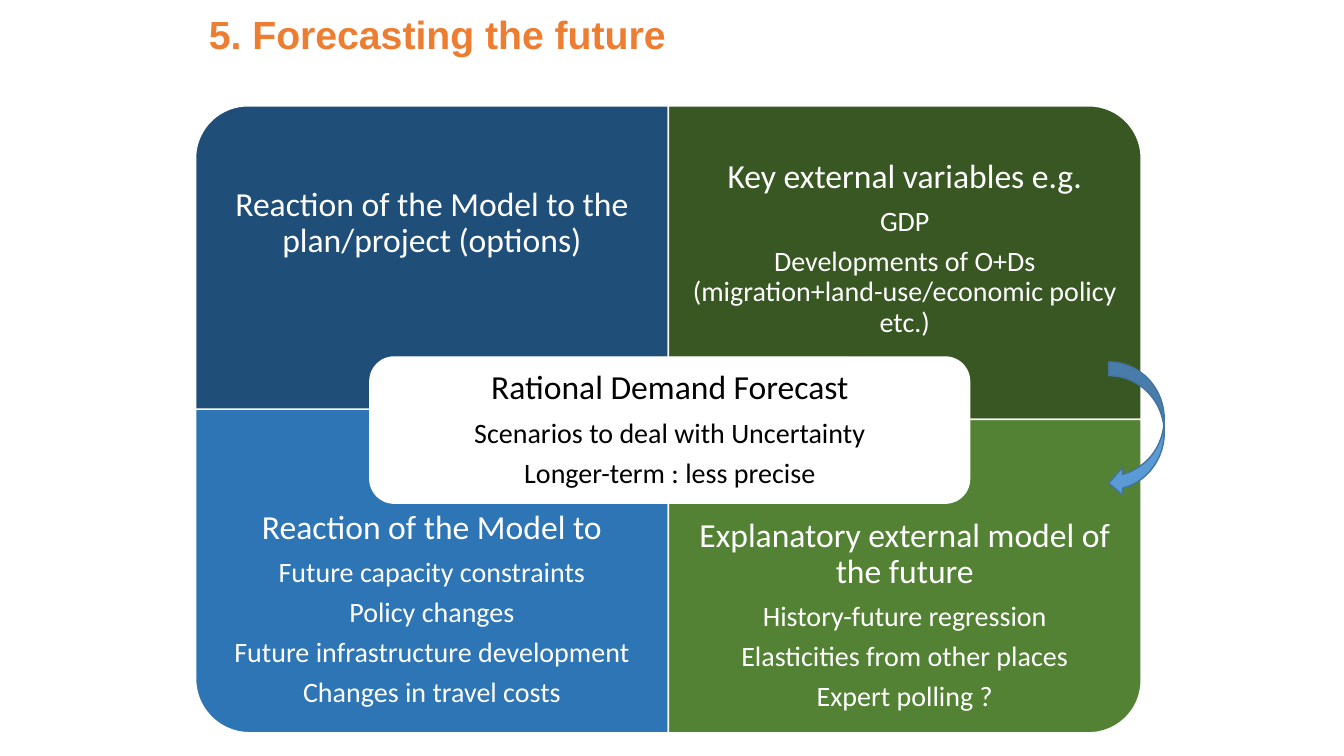
import pptx
import pptx.dml.color
import pptx.enum.shapes
import pptx.enum.text
import pptx.util

Pt = pptx.util.Pt
MSO = pptx.enum.shapes.MSO_SHAPE
ALIGN = pptx.enum.text.PP_ALIGN
ANCHOR = pptx.enum.text.MSO_ANCHOR


def rgb(color):
    return pptx.dml.color.RGBColor.from_string(color)


def apply(target, values):
    for name, value in values.items():
        setattr(target, name, value)


class Deck:
    """Holds the style and the current slide, with one method per element."""

    font = "Calibri"
    head_size = 24
    item_size = 20
    space_ratio = 0.35
    line_spacing = 0.9

    def __init__(self, width, height):
        self.prs = pptx.Presentation()
        apply(self.prs, {"slide_width": Pt(width), "slide_height": Pt(height)})
        self.s = self.prs.slides.add_slide(self.prs.slide_layouts[5])

    def run(self, p, text, color, **font):
        r = p.add_run()
        r.text = text
        apply(r.font, font)
        r.font.color.rgb = rgb(color)

    def frame(self, sp, box, anchor, margins):
        apply(sp, dict(zip(("left", "top", "width", "height"), map(Pt, box))))
        tf = sp.text_frame
        sides = ("margin_left", "margin_top", "margin_right", "margin_bottom")
        apply(tf, dict(zip(sides, map(Pt, margins))))
        apply(tf, {"word_wrap": True, "vertical_anchor": anchor,
                   "auto_size": pptx.enum.text.MSO_AUTO_SIZE.NONE})
        return tf

    def title(self, text, box, indent, color):
        tf = self.frame(self.s.shapes.title, box, ANCHOR.TOP, (indent, 3.6, 7.2, 3.6))
        p = tf.paragraphs[0]
        p.alignment = ALIGN.LEFT
        self.run(p, text, color, name="Arial", size=Pt(28), bold=True)

    def shape(self, kind, box, fill, line="FFFFFF", rotation=0):
        left, top, width, height = box
        if rotation % 180:
            left, top = left + (width - height) / 2, top + (height - width) / 2
            width, height = height, width
        sp = self.s.shapes.add_shape(kind, *map(Pt, (left, top, width, height)))
        sp.rotation = rotation
        sp.shadow.inherit = False
        sp.fill.solid()
        sp.fill.fore_color.rgb = rgb(fill)
        sp.line.color.rgb = rgb(line)
        sp.line.width = Pt(1)

    def text(self, lines, box, margin, color="FFFFFF"):
        sp = self.s.shapes.add_textbox(0, 0, 0, 0)
        tf = self.frame(sp, box, ANCHOR.MIDDLE, [margin] * 4)
        for i, line in enumerate(lines):
            p = tf.add_paragraph() if i else tf.paragraphs[0]
            size = self.item_size if i else self.head_size
            apply(p, {"alignment": ALIGN.CENTER, "line_spacing": self.line_spacing,
                      "space_after": Pt(size * self.space_ratio)})
            self.run(p, line, color, name=self.font, size=Pt(size))


LEFT, TOP, BOTTOM = 139.7, 75.6, 523.4
QUAD_W, QUAD_H, TALL_H = 337.7, 223.9, 231.1
MIDDLE = LEFT + QUAD_W

QUADRANTS = [
    (LEFT, TOP, QUAD_H, 270, "1F4E79", 75.6, 168, 13.5,
     ["Reaction of the Model to the plan/project (options)"]),
    (MIDDLE, TOP, QUAD_H, 0, "385723", 93.6, 168, 13.5,
     ["Key external variables e.g.", "GDP",
      "Developments of O+Ds (migration+land-use/economic policy etc.)"]),
    (LEFT, BOTTOM - TALL_H, TALL_H, 180, "2E75B6", 348.6, 173, 11.5,
     ["Reaction of the Model to", "Future capacity constraints", "Policy changes",
      "Future infrastructure development", "Changes in travel costs"]),
    (MIDDLE, BOTTOM - QUAD_H, QUAD_H, 90, "548235", 355.6, 168, 11.5,
     ["Explanatory external model of the future", "History-future regression",
      "Elasticities from other places", "Expert polling ?"]),
]


def main():
    deck = Deck(960, 540)
    deck.title("5. Forecasting the future", (106, 3.6, 641, 41), 43.2, "ED7D31")
    for left, top, height, rotation, fill, text_top, text_h, margin, lines in QUADRANTS:
        deck.shape(MSO.ROUND_1_RECTANGLE, (left, top, QUAD_W, height), fill,
                   rotation=rotation)
        deck.text(lines, (left, text_top, QUAD_W, text_h), margin)
    deck.shape(MSO.ROUNDED_RECTANGLE, (264.2, 255, 428.4, 104.4), "FFFFFF")
    deck.text(["Rational Demand Forecast", "Scenarios to deal with Uncertainty",
               "Longer-term : less precise"], (269.3, 260, 418.3, 94.3), 7.2, "000000")
    deck.shape(MSO.CURVED_LEFT_ARROW, (792, 258.5, 39.6, 96.5), "5B9BD5", "43739E")
    deck.prs.save("out.pptx")


if __name__ == "__main__":
    main()
